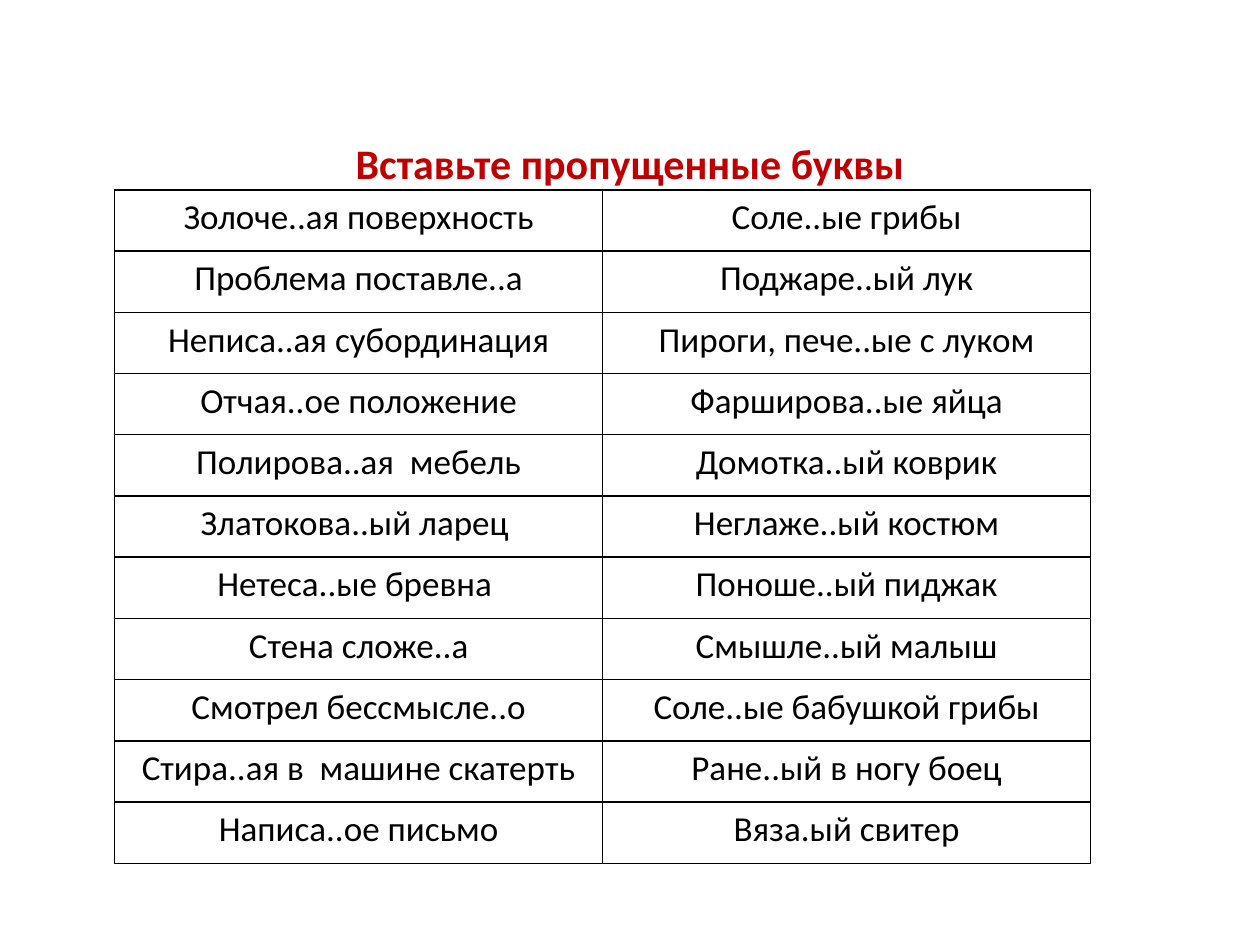
from dataclasses import dataclass

from lxml.etree import SubElement
from pptx import Presentation
from pptx.dml.color import RGBColor
from pptx.enum.text import MSO_ANCHOR, PP_ALIGN
from pptx.oxml.ns import qn
from pptx.util import Pt


@dataclass(frozen=True)
class Theme:
    font: str = "Calibri"
    title_size: float = 24
    cell_size: float = 20
    title_color: str = "C00000"
    text_color: str = "000000"
    border_color: str = "000000"
    border_width: float = 1


@dataclass(frozen=True)
class Box:
    left: float
    top: float
    width: float
    height: float

    def lengths(self) -> tuple:
        return Pt(self.left), Pt(self.top), Pt(self.width), Pt(self.height)


@dataclass(frozen=True)
class Exercise:
    left: str
    right: str


THEME = Theme()
TITLE = "Вставьте пропущенные буквы"
TITLE_BOX = Box(49.7, 56.9, 620.6, 76.3)
TABLE_BOX = Box(65.5, 108.5, 557.8, 385)
EXERCISES = [
    Exercise("Золоче..ая поверхность", "Соле..ые грибы"),
    Exercise("Проблема поставле..а", "Поджаре..ый лук"),
    Exercise("Неписа..ая субординация", "Пироги, пече..ые с луком"),
    Exercise("Отчая..ое положение", "Фарширова..ые яйца"),
    Exercise("Полирова..ая  мебель", "Домотка..ый коврик"),
    Exercise("Златокова..ый ларец ", "Неглаже..ый костюм"),
    Exercise("Нетеса..ые бревна ", "Поноше..ый пиджак"),
    Exercise("Стена сложе..а", "Смышле..ый малыш"),
    Exercise("Смотрел бессмысле..о", "Соле..ые бабушкой грибы"),
    Exercise("Стира..ая в  машине скатерть", "Ране..ый в ногу боец"),
    Exercise("Написа..ое письмо", "Вяза.ый свитер"),
]


def set_attributes(target, values: dict) -> None:
    for name, value in values.items():
        setattr(target, name, value)


def write_text(text_frame, text: str, size: float, color: str, bold: bool) -> None:
    paragraph = text_frame.paragraphs[0]
    paragraph.alignment = PP_ALIGN.CENTER
    run = paragraph.add_run()
    run.text = text
    set_attributes(run.font, {"name": THEME.font, "size": Pt(size), "bold": bold})
    run.font.color.rgb = RGBColor.from_string(color)


def add_title(slide) -> None:
    text_frame = slide.shapes.add_textbox(*TITLE_BOX.lengths()).text_frame
    set_attributes(text_frame, {"word_wrap": True, "vertical_anchor": MSO_ANCHOR.MIDDLE})
    write_text(text_frame, TITLE, THEME.title_size, THEME.title_color, True)
    text_frame.paragraphs[0].line_spacing = 0.9


def add_borders(cell) -> None:
    properties = cell._tc.get_or_add_tcPr()
    for side in ("a:lnL", "a:lnR", "a:lnT", "a:lnB"):
        line = SubElement(properties, qn(side), w=str(Pt(THEME.border_width)))
        fill = SubElement(line, qn("a:solidFill"))
        SubElement(fill, qn("a:srgbClr"), val=THEME.border_color)


def add_exercise_table(slide) -> None:
    table = slide.shapes.add_table(len(EXERCISES), 2, *TABLE_BOX.lengths()).table
    set_attributes(table, {"first_row": False, "horz_banding": False})
    for column in table.columns:
        column.width = Pt(TABLE_BOX.width / 2)
    for row, exercise in zip(table.rows, EXERCISES):
        row.height = Pt(TABLE_BOX.height / len(EXERCISES))
        for cell, text in zip(row.cells, (exercise.left, exercise.right)):
            write_text(cell.text_frame, text, THEME.cell_size, THEME.text_color, False)
            # Borders come before the fill in the cell properties
            add_borders(cell)
            cell.fill.background()


def main() -> None:
    presentation = Presentation()
    set_attributes(presentation, {"slide_width": Pt(720), "slide_height": Pt(540)})
    slide = presentation.slides.add_slide(presentation.slide_layouts[6])

    # Heading, then the two-column word list
    add_title(slide)
    add_exercise_table(slide)
    presentation.save("out.pptx")


if __name__ == "__main__":
    main()
